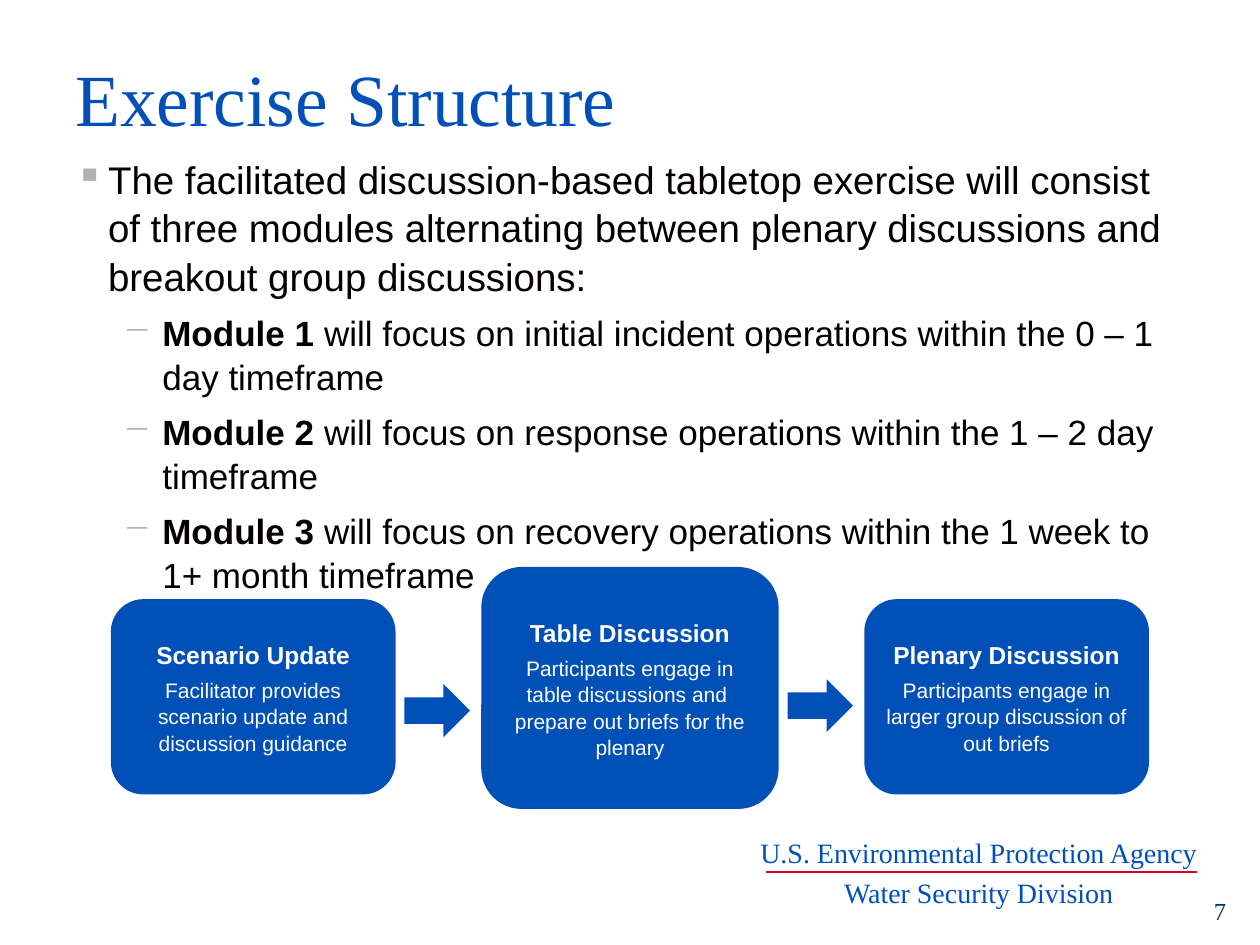
import pptx
import pptx.util
import pptx.dml.color
import pptx.enum.shapes
import pptx.enum.text
import pptx.oxml.ns
import lxml.etree

Inches, Pt = pptx.util.Inches, pptx.util.Pt
SHAPE = pptx.enum.shapes.MSO_SHAPE
ALIGN = pptx.enum.text.PP_ALIGN
ANCHOR = pptx.enum.text.MSO_ANCHOR
qn = pptx.oxml.ns.qn

WIDTH, HEIGHT = 10, 7.5
MARGIN = WIDTH / 20
COLORS = {"blue": "0050B8", "navy": "003366", "ink": "040000",
          "bullet": "B0B1B3", "rule": "CC0033", "white": "FFFFFF"}
SERIF, SANS = "Times New Roman", "Arial"

INTRO = ("The facilitated discussion-based tabletop exercise will consist of three modules "
         "alternating between plenary discussions and breakout group discussions:")
MODULES = [
    ("Module 1", " will focus on initial incident operations within the 0 – 1 day timeframe"),
    ("Module 2", " will focus on response operations within the 1 – 2 day timeframe"),
    ("Module 3", " will focus on recovery operations within the 1 week to 1+ month timeframe"),
]
# Heading, description lines, width, height, vertical centre
STAGES = [
    ("Scenario Update",
     ["Facilitator provides scenario update and discussion guidance"], 2.26, 1.55, 5.53),
    ("Table Discussion",
     ["Participants engage in table discussions and ",
      "prepare out briefs for the plenary"], 2.36, 1.92, 5.46),
    ("Plenary Discussion",
     ["Participants engage in larger group discussion of out briefs"], 2.26, 1.55, 5.53),
]
STAGE_PITCH = 2.99
ARROW_WIDTH, ARROW_HEIGHT, ARROW_GAP = 0.52, 0.42, 0.07
ARROW_CENTRES = [5.64, 5.6]


def rgb(name):
    return pptx.dml.color.RGBColor.from_string(COLORS[name])


def style(run, size, font, color, bold=False):
    run.font.size, run.font.name, run.font.bold = Pt(size), font, bold
    run.font.color.rgb = rgb(color)


def add_text(slide, left, top, width, height):
    frame = slide.shapes.add_textbox(
        Inches(left), Inches(top), Inches(width), Inches(height)).text_frame
    frame.word_wrap = True
    return frame


def write_lines(frame, lines, size, font, color, align, space_before=0):
    frame.text = "\n".join(lines)
    for index, line in enumerate(frame.paragraphs):
        line.alignment = align
        if index:
            line.space_before = Pt(space_before)
        style(line.runs[0], size, font, color)


def set_bullet(paragraph, mark, indent, hanging):
    props = paragraph._p.get_or_add_pPr()
    props.set("marL", str(Inches(indent)))
    props.set("indent", str(-Inches(hanging)))
    tint = lxml.etree.SubElement(props, qn("a:buClr"))
    lxml.etree.SubElement(tint, qn("a:srgbClr"), val=COLORS["bullet"])
    lxml.etree.SubElement(props, qn("a:buChar"), char=mark)


def add_outline(slide):
    frame = add_text(slide, MARGIN, 1.17, WIDTH - 2 * MARGIN, 3.33)
    for index, parts in enumerate([(INTRO,)] + MODULES):
        item = frame.paragraphs[0] if index == 0 else frame.add_paragraph()
        item.line_spacing = 1.05
        if index:
            item.level = 1
            item.space_before = Pt(6)
            set_bullet(item, "−", 0.69, 0.31)
        else:
            set_bullet(item, "▪", 0.26, 0.26)
        for part in parts:
            run = item.add_run()
            run.text = part
            style(run, 20 if index else 22, SANS, "ink", bold=part.startswith("Module"))


def add_block(slide, kind, left, middle, width, height):
    block = slide.shapes.add_shape(kind, Inches(left), Inches(middle - height / 2),
                                   Inches(width), Inches(height))
    block.shadow.inherit = False
    block.fill.solid()
    block.fill.fore_color.rgb = rgb("blue")
    block.line.fill.background()
    return block


def add_stage(slide, left, heading, details, width, height, middle):
    frame = add_block(slide, SHAPE.ROUNDED_RECTANGLE, left, middle, width, height).text_frame
    frame.word_wrap = True
    frame.vertical_anchor = ANCHOR.MIDDLE
    frame.margin_left = frame.margin_right = Inches(0.08)
    frame.text = "\n".join([heading] + details)
    for index, line in enumerate(frame.paragraphs):
        line.alignment = ALIGN.CENTER
        line.line_spacing = 1.05
        line.space_after = Pt(4 if index == 0 or len(details) == 1 else 0)
        style(line.runs[0], 12 if index else 14, SANS, "white", bold=index == 0)


def add_flow(slide):
    for index, (heading, details, width, height, middle) in enumerate(STAGES):
        left = WIDTH / 2 + (index - 1) * STAGE_PITCH - width / 2
        add_stage(slide, left, heading, details, width, height, middle)
        if index < len(ARROW_CENTRES):
            add_block(slide, SHAPE.RIGHT_ARROW, left + width + ARROW_GAP,
                      ARROW_CENTRES[index], ARROW_WIDTH, ARROW_HEIGHT)


def add_rule(slide, left, right, y):
    rule = slide.shapes.add_connector(pptx.enum.shapes.MSO_CONNECTOR.STRAIGHT,
                                      Inches(left), Inches(y), Inches(right), Inches(y))
    rule.line.color.rgb = rgb("rule")
    rule.line.width = Pt(1)
    lxml.etree.SubElement(rule._element.spPr, qn("a:effectLst"))


def main():
    deck = pptx.Presentation()
    deck.slide_width, deck.slide_height = Inches(WIDTH), Inches(HEIGHT)
    slide = deck.slides.add_slide(deck.slide_layouts[6])

    # Footer: page number, agency and rule
    write_lines(add_text(slide, 7.5, 7.06, 2.33, 0.4), ["7"], 14, SERIF, "navy", ALIGN.RIGHT)
    agency = ["U.S. Environmental Protection Agency ", "Water Security Division "]
    write_lines(add_text(slide, 5.92, 6.58, 3.75, 0.71), agency, 16, SERIF, "blue",
                ALIGN.CENTER, space_before=4)
    add_rule(slide, 6.08, WIDTH - MARGIN, 6.92)

    # Title
    title = add_text(slide, MARGIN, 0.3, WIDTH - 2 * MARGIN, 1.25)
    title.margin_top = Inches(0.12)
    write_lines(title, ["Exercise Structure"], 42, SERIF, "blue", ALIGN.LEFT)

    # Outline of the modules and the flow of each one
    add_outline(slide)
    add_flow(slide)

    deck.save("out.pptx")


if __name__ == "__main__":
    main()
